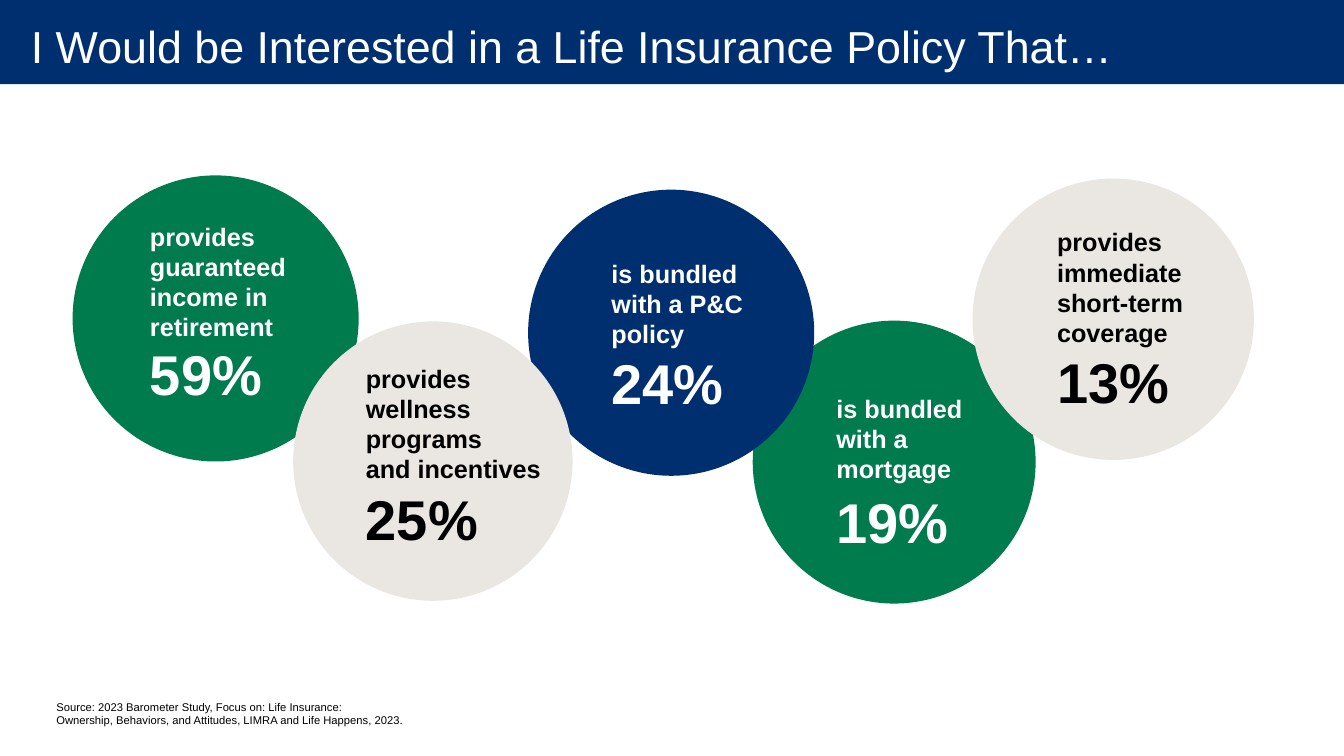
from pptx import Presentation
from pptx.dml.color import RGBColor
from pptx.enum.shapes import MSO_SHAPE as Shape
from pptx.enum.text import MSO_ANCHOR as Anchor
from pptx.util import Cm, Pt

NAVY, GREEN, SAND = "002F70", "007B4E", "EAE6E2"
WHITE, BLACK = "FFFFFF", "000000"
FONT = "Arial"

TITLE = "I Would be Interested in a Life Insurance Policy That…"
SOURCE = ("Source: 2023 Barometer Study, Focus on: Life Insurance:\v"
          "Ownership, Behaviors, and Attitudes, LIMRA and Life Happens, 2023.")

# Back to front: fill, text colour, circle (left, top, diameter),
# text left, label top, percentage top, label paragraphs, percentage
CIRCLES = [
    (GREEN, WHITE, (1.83, 4.42, 7.21), 3.53, 5.44, 8.43,
     ["provides guaranteed income in retirement"], "59%"),
    (GREEN, WHITE, (18.97, 8.08, 7.13), 20.83, 9.78, 12.17,
     ["is bundled", "with a", "mortgage"], "19%"),
    (NAVY, WHITE, (13.31, 4.78, 7.21), 15.16, 6.38, 8.66,
     ["is bundled", "with a P&C policy"], "24%"),
    (SAND, BLACK, (7.39, 8.1, 7.04), 8.97, 9.02, 12.09,
     ["provides wellness programs", "and incentives"], "25%"),
    (SAND, BLACK, (24.51, 4.5, 7.09), 26.39, 5.59, 8.64,
     ["provides immediate short-term coverage"], "13%"),
]
TEXT_WIDTH, PERCENT_HEIGHT, LINE_HEIGHT = 5.05, 1.96, 0.76


def color(hex_string):
    return RGBColor.from_string(hex_string)


def add_filled(slide, kind, left, top, width, height, fill):
    shape = slide.shapes.add_shape(kind, Cm(left), Cm(top), Cm(width), Cm(height))
    shape.shadow.inherit = False
    shape.fill.solid()
    shape.fill.fore_color.rgb = color(fill)
    shape.line.fill.background()


def add_text(slide, left, top, width, height, lines, size, text_color,
             bold=False, anchor=Anchor.TOP):
    """Add a wrapped text box with one paragraph per line and return its frame."""
    box = slide.shapes.add_textbox(Cm(left), Cm(top), Cm(width), Cm(height))
    frame = box.text_frame
    frame.word_wrap = True
    frame.vertical_anchor = anchor
    for index, line in enumerate(lines):
        paragraph = frame.add_paragraph() if index else frame.paragraphs[0]
        paragraph.text = line
        font = paragraph.font
        font.name, font.size, font.bold = FONT, Pt(size), bold
        font.color.rgb = color(text_color)
    return frame


def main():
    presentation = Presentation()
    presentation.slide_width, presentation.slide_height = Cm(33.87), Cm(19.05)
    slide = presentation.slides.add_slide(presentation.slide_layouts[6])

    add_filled(slide, Shape.RECTANGLE, 0, -0.08, 33.87, 2.2, NAVY)
    title = add_text(slide, 0.02, -0.08, 33.85, 2.46, [TITLE], 32, WHITE,
                     anchor=Anchor.MIDDLE)
    title.margin_left, title.margin_right = Cm(0.76), Cm(0.5)
    title.margin_top = title.margin_bottom = 0
    title.word_wrap = False

    add_text(slide, 1.17, 16.61, 14.86, 1.83, [SOURCE], 8, BLACK,
             anchor=Anchor.BOTTOM)

    for (fill, text_color, (left, top, diameter), text_left, label_top,
         percent_top, label, percent) in CIRCLES:
        add_filled(slide, Shape.OVAL, left, top, diameter, diameter, fill)
        add_text(slide, text_left, label_top, TEXT_WIDTH, 4 * LINE_HEIGHT,
                 label, 18, text_color, bold=True)
        add_text(slide, text_left, percent_top, TEXT_WIDTH, PERCENT_HEIGHT,
                 [percent], 40, text_color, bold=True)

    presentation.save("out.pptx")


if __name__ == "__main__":
    main()
